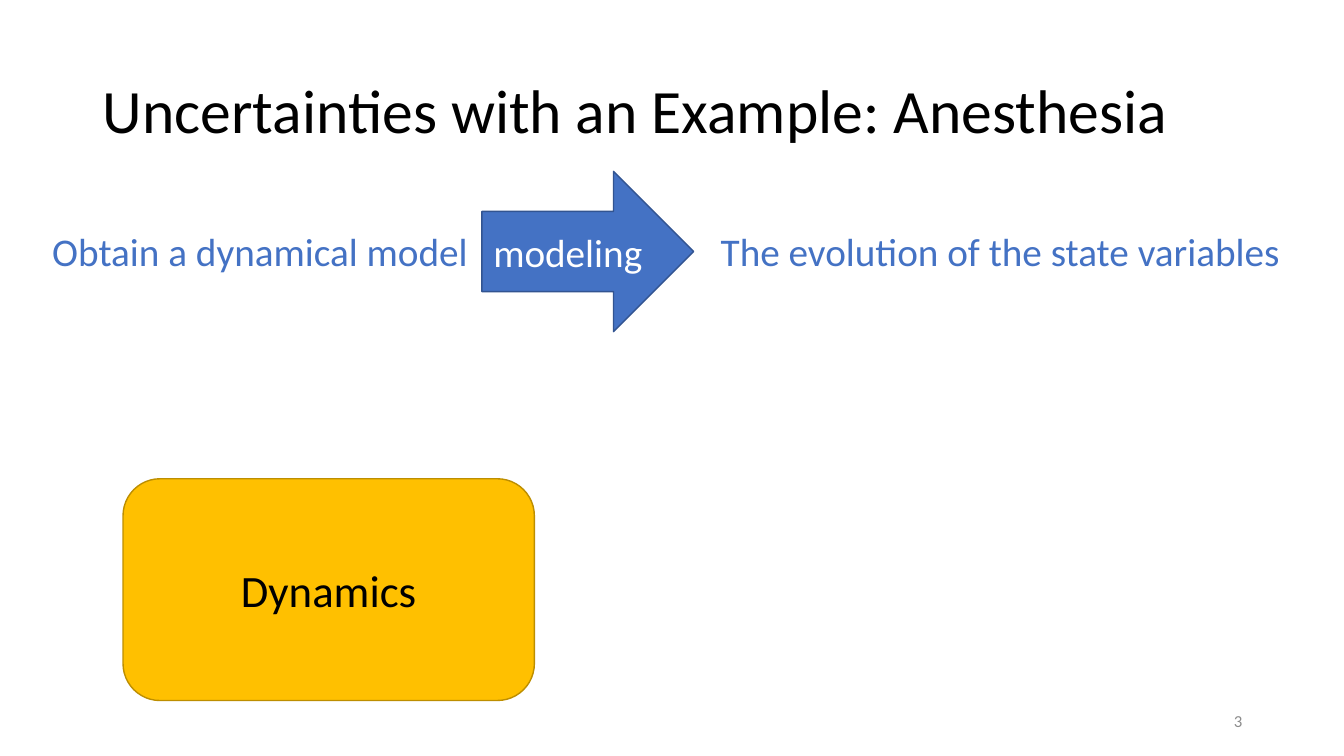
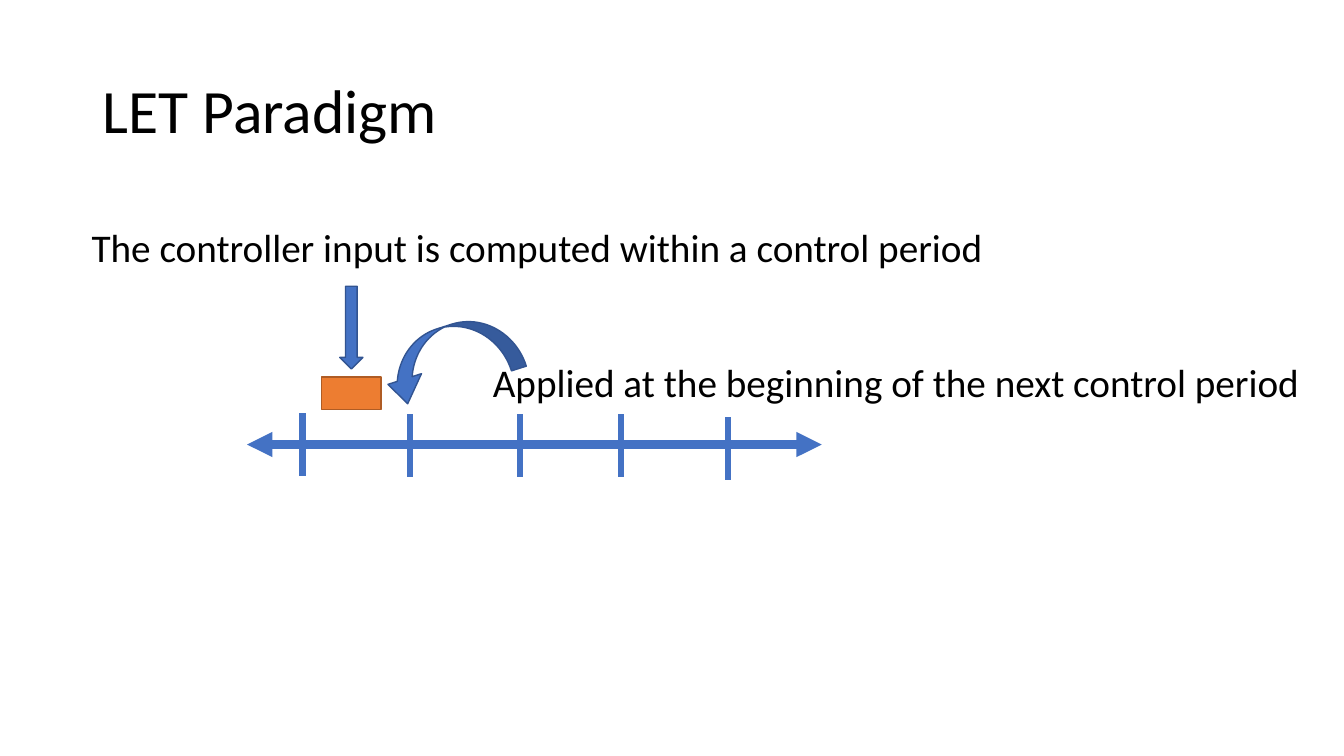
from lxml import etree
from pptx import Presentation
from pptx.dml.color import RGBColor
from pptx.enum.shapes import MSO_CONNECTOR, MSO_SHAPE
from pptx.enum.text import MSO_ANCHOR, MSO_AUTO_SIZE, PP_ALIGN
from pptx.oxml.ns import qn
from pptx.util import Pt

PX = 9144  # 100 px to the inch
FONT = "Calibri"
HUES = {"black": "000000", "white": "FFFFFF", "gray": "8C8C8C",
        "blue": "4472C4", "navy": "325491", "gold": "FFC000",
        "ochre": "BD8E00", "orange": "ED7D31", "rust": "AF5C24"}
LEFT, MID, RIGHT = PP_ALIGN.LEFT, PP_ALIGN.CENTER, PP_ALIGN.RIGHT
TOP, CENTER = MSO_ANCHOR.TOP, MSO_ANCHOR.MIDDLE
STRAIGHT = MSO_CONNECTOR.STRAIGHT


def hue(name):
    return RGBColor.from_string(HUES[name])


def write(item, text, size, color, align=LEFT, anchor=TOP):
    frame = item.text_frame
    frame.word_wrap = True
    frame.auto_size = MSO_AUTO_SIZE.NONE
    frame.vertical_anchor = anchor
    frame.text = text
    para = frame.paragraphs[0]
    para.alignment = align
    font = para.runs[0].font
    font.name, font.size, font.color.rgb = FONT, Pt(size), hue(color)


prs = Presentation()
prs.slide_width, prs.slide_height = 1333 * PX, 750 * PX

# Slides with titles
pages = []
for name in ("Uncertainties with an Example: Anesthesia", "LET Paradigm"):
    page = prs.slides.add_slide(prs.slide_layouts[5])
    title = page.shapes.title
    title.left, title.top = 92 * PX, 40 * PX
    title.width, title.height = 1150 * PX, 145 * PX
    write(title, name, 44, "black", LEFT, CENTER)
    title.text_frame.paragraphs[0].line_spacing = 0.9
    pages.append(page.shapes)
model, timing = pages

# Time axis and period marks
lines = [(245, 441, 815, 441, 6)]
for x, y in ((300, 410), (407, 411), (516, 411), (616, 411), (722, 414)):
    lines.append((x, y, x, y + 62, 4.5))
for x1, y1, x2, y2, weight in lines:
    line = timing.add_connector(STRAIGHT, x1 * PX, y1 * PX, x2 * PX, y2 * PX)
    line.line.color.rgb = hue("blue")
    line.line.width = Pt(weight)
    props = line._element.spPr
    if y1 == y2:
        for end in ("a:headEnd", "a:tailEnd"):
            etree.SubElement(props.find(qn("a:ln")), qn(end), type="triangle")
    etree.SubElement(props, qn("a:effectLst"))

# Filled shapes
shapes = {}
for key, page, kind, x, y, w, h, fill, edge in (
    ("model", model, MSO_SHAPE.RIGHT_ARROW, 478, 170, 210, 159, "blue", "navy"),
    ("plant", model, MSO_SHAPE.ROUNDED_RECTANGLE, 122, 475, 408, 220, "gold", "ochre"),
    ("task", timing, MSO_SHAPE.RECTANGLE, 319, 374, 59, 32, "orange", "rust"),
    ("input", timing, MSO_SHAPE.DOWN_ARROW, 337, 284, 23, 82, "blue", "navy"),
    ("apply", timing, MSO_SHAPE.CURVED_DOWN_ARROW, 375, 324, 141, 62, "blue", "navy"),
):
    shape = page.add_shape(kind, x * PX, y * PX, w * PX, h * PX)
    shape.shadow.inherit = False
    shape.fill.solid()
    shape.fill.fore_color.rgb = hue(fill)
    shape.line.color.rgb = hue(edge)
    shape.line.width = Pt(1)
    shapes[key] = shape
write(shapes["model"], "modeling", 28, "white", MID, CENTER)
write(shapes["plant"], "Dynamics", 32, "black", MID, CENTER)

# Curved arrow back to the start of the next period
curve = shapes["apply"]
curve.rotation = 342.4
curve._element.spPr.find(qn("a:xfrm")).set("flipH", "1")
for i, value in enumerate((0.25, 0.563, 0.391)):
    curve.adjustments[i] = value

# Captions
for page, text, x, y, w, color in (
    (model, "Obtain a dynamical model", 42, 221, 436, "blue"),
    (model, "The evolution of the state variables", 705, 221, 596, "blue"),
    (timing, "The controller input is computed within a control period",
     81, 217, 933, "black"),
    (timing, "Applied at the beginning of the next control period",
     479, 351, 933, "black"),
):
    box = page.add_textbox(x * PX, y * PX, w * PX, 57 * PX)
    write(box, text, 28, color)

# Page number
box = model.add_textbox(942 * PX, 695 * PX, 300 * PX, 40 * PX)
write(box, "3", 12, "gray", RIGHT, CENTER)

prs.save("out.pptx")
